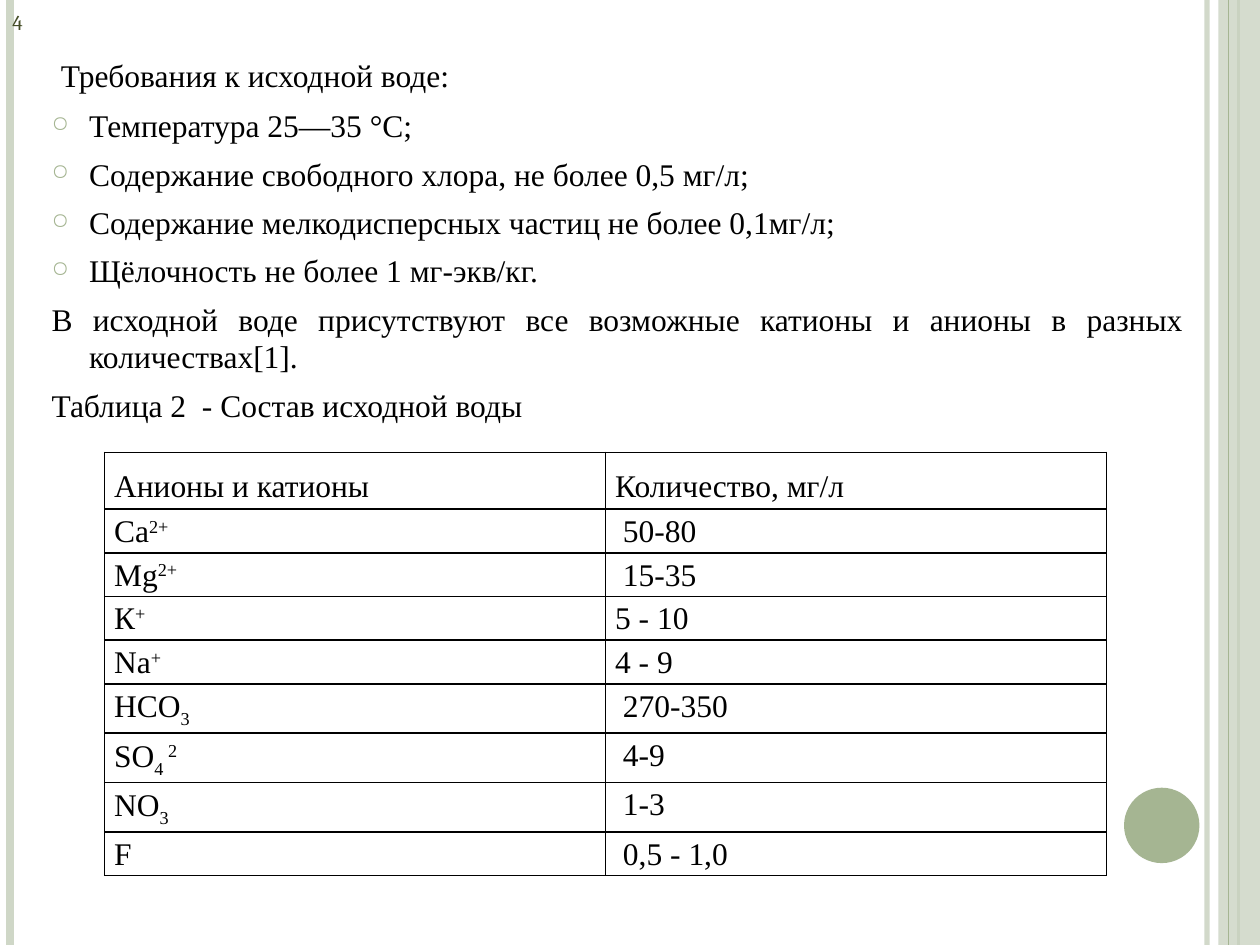
from lxml.etree import SubElement
from pptx import Presentation
from pptx.dml.color import RGBColor
from pptx.enum.shapes import MSO_CONNECTOR, MSO_SHAPE
from pptx.enum.text import MSO_ANCHOR, PP_ALIGN
from pptx.oxml.ns import qn
from pptx.util import Cm, Pt

COLORS = {"sage": "A5B592", "pale": "CFD7C7", "olive": "444D26", "ink": "000000"}
SERIF, HEADING = "Times New Roman", "Cambria"
WIDTH, HEIGHT = 25.4, 19.05
SUB, SUP = "-25000", "30000"


class SlideBuilder:
    """Holds the style and the slide being built."""

    def __init__(self, slide):
        self.slide = slide

    def color(self, name):
        return RGBColor.from_string(COLORS[name])

    def set_alpha(self, element, percent):
        for srgb in element.iter(qn("a:srgbClr")):
            SubElement(srgb, qn("a:alpha"), val=str(percent * 1000))

    def rule(self, x, color, width, alpha=None):
        line = self.slide.shapes.add_connector(
            MSO_CONNECTOR.STRAIGHT, Cm(x), Cm(0), Cm(x), Cm(HEIGHT))
        line.line.color.rgb = self.color(color)
        line.line.width = Pt(width)
        properties = line.line._get_or_add_ln().getparent()
        if alpha:
            self.set_alpha(properties, alpha)
        SubElement(properties, qn("a:effectLst"))

    def shape(self, kind, box, color, alpha=None):
        shape = self.slide.shapes.add_shape(kind, *map(Cm, box))
        shape.shadow.inherit = False
        shape.fill.solid()
        shape.fill.fore_color.rgb = self.color(color)
        shape.line.fill.background()
        if alpha:
            self.set_alpha(shape.fill._xPr.find(qn("a:solidFill")), alpha)

    def text_frame(self, box, anchor=MSO_ANCHOR.TOP):
        frame = self.slide.shapes.add_textbox(*map(Cm, box)).text_frame
        frame.word_wrap = True
        frame.vertical_anchor = anchor
        return frame

    def run(self, paragraph, text, size=18, font=SERIF, color="ink", baseline=None):
        run = paragraph.add_run()
        run.text = text
        for name, value in {"size": Pt(size), "name": font}.items():
            setattr(run.font, name, value)
        run.font.color.rgb = self.color(color)
        if baseline:
            run.font._element.set("baseline", baseline)

    def hanging(self, paragraph, align, bullet=False):
        for name, value in {"alignment": align, "space_before": Pt(6)}.items():
            setattr(paragraph, name, value)
        properties = paragraph._p.get_or_add_pPr()
        properties.set("marL", str(Cm(0.76)))
        properties.set("indent", str(Cm(-0.76)))
        if bullet:
            tint = SubElement(properties, qn("a:buClr"))
            SubElement(tint, qn("a:srgbClr"), val=COLORS["sage"])
            SubElement(properties, qn("a:buSzPct"), val="70000")
            SubElement(properties, qn("a:buChar"), char="○")
        else:
            SubElement(properties, qn("a:buNone"))

    def cell(self, cell, runs, spacing):
        margins = {"margin_left": Cm(0.19), "margin_right": Cm(0.19),
                   "margin_top": 0, "margin_bottom": 0}
        for name, value in margins.items():
            setattr(cell, name, value)
        properties = cell._tc.get_or_add_tcPr()
        for side in ("lnL", "lnR", "lnT", "lnB"):
            border = SubElement(properties, qn(f"a:{side}"), w=str(Pt(1)))
            fill = SubElement(border, qn("a:solidFill"))
            SubElement(fill, qn("a:srgbClr"), val=COLORS["ink"])
        cell.fill.background()
        paragraph = cell.text_frame.paragraphs[0]
        paragraph.alignment = PP_ALIGN.JUSTIFY
        paragraph.line_spacing = spacing
        for text, baseline in runs:
            self.run(paragraph, text, baseline=baseline)

    def table(self, box, rows, heights):
        table = self.slide.shapes.add_table(
            len(rows), len(rows[0]), *map(Cm, box)).table
        table.first_row = table.horz_banding = False
        for r, (row, height) in enumerate(zip(rows, heights)):
            table.rows[r].height = Cm(height)
            for c, runs in enumerate(row):
                self.cell(table.cell(r, c), runs, 1.15 if r else 1.5)


def plain(text):
    return [(text, None)]


def main():
    deck = Presentation()
    deck.slide_width, deck.slide_height = Cm(WIDTH), Cm(HEIGHT)
    page = SlideBuilder(deck.slides.add_slide(deck.slide_layouts[6]))

    # Side stripes and circle
    page.rule(24.33, "pale", 3, alpha=93)
    page.rule(0.21, "pale", 4.5)
    page.rule(24.97, "sage", 1.5)
    page.shape(MSO_SHAPE.RECTANGLE, (24.56, 0, 0.84, HEIGHT), "pale", alpha=87)
    page.rule(24.77, "sage", 0.75)
    page.shape(MSO_SHAPE.OVAL, (22.66, 15.88, 1.52, 1.52), "sage")

    # Water requirements
    requirements = page.text_frame((0.79, 0.79, 23.32, 17.32))
    heading = requirements.paragraphs[0]
    page.hanging(heading, PP_ALIGN.JUSTIFY)
    page.run(heading, " ", size=24, font=HEADING)
    page.run(heading, "Требования к исходной воде:")
    limits = [
        "Температура 25—35 °С;",
        "Содержание свободного хлора, не более 0,5 мг/л;",
        "Содержание мелкодисперсных частиц не более 0,1мг/л;",
        "Щёлочность не более 1 мг-экв/кг.",
    ]
    for limit in limits:
        item = requirements.add_paragraph()
        page.hanging(item, PP_ALIGN.JUSTIFY, bullet=True)
        page.run(item, limit)
    closing = [
        ("В исходной воде присутствуют все возможные катионы и анионы "
         "в разных количествах[1].", PP_ALIGN.JUSTIFY),
        ("Таблица 2  - Состав исходной воды", PP_ALIGN.LEFT),
    ]
    for text, align in closing:
        paragraph = requirements.add_paragraph()
        page.hanging(paragraph, align)
        page.run(paragraph, text)

    # Slide number
    number = page.text_frame((0, 0, 1.7, 0.91), MSO_ANCHOR.MIDDLE)
    page.run(number.paragraphs[0], "4", size=12, font=HEADING, color="olive")

    # Composition of the source water
    composition = [
        (plain("Анионы и катионы"), "Количество, мг/л"),
        ([("Са", None), ("2+", SUP)], " 50-80"),
        ([("Mg", None), ("2+", SUP)], " 15-35"),
        ([("К", None), ("+", SUP)], "5 - 10"),
        ([("Na", None), ("+", SUP)], "4 - 9"),
        ([("НСО", None), ("3", SUB)], " 270-350"),
        ([("SО", None), ("4 ", SUB), ("2", SUP)], " 4-9"),
        ([("NO", None), ("3", SUB)], " 1-3"),
        (plain("F"), " 0,5 - 1,0"),
    ]
    rows = [(ion, plain(amount)) for ion, amount in composition]
    heights = [1.14] + [0.88] * (len(rows) - 1)
    page.table((2.11, 9.12, 20.2, sum(heights)), rows, heights)

    deck.save("out.pptx")


if __name__ == "__main__":
    main()
